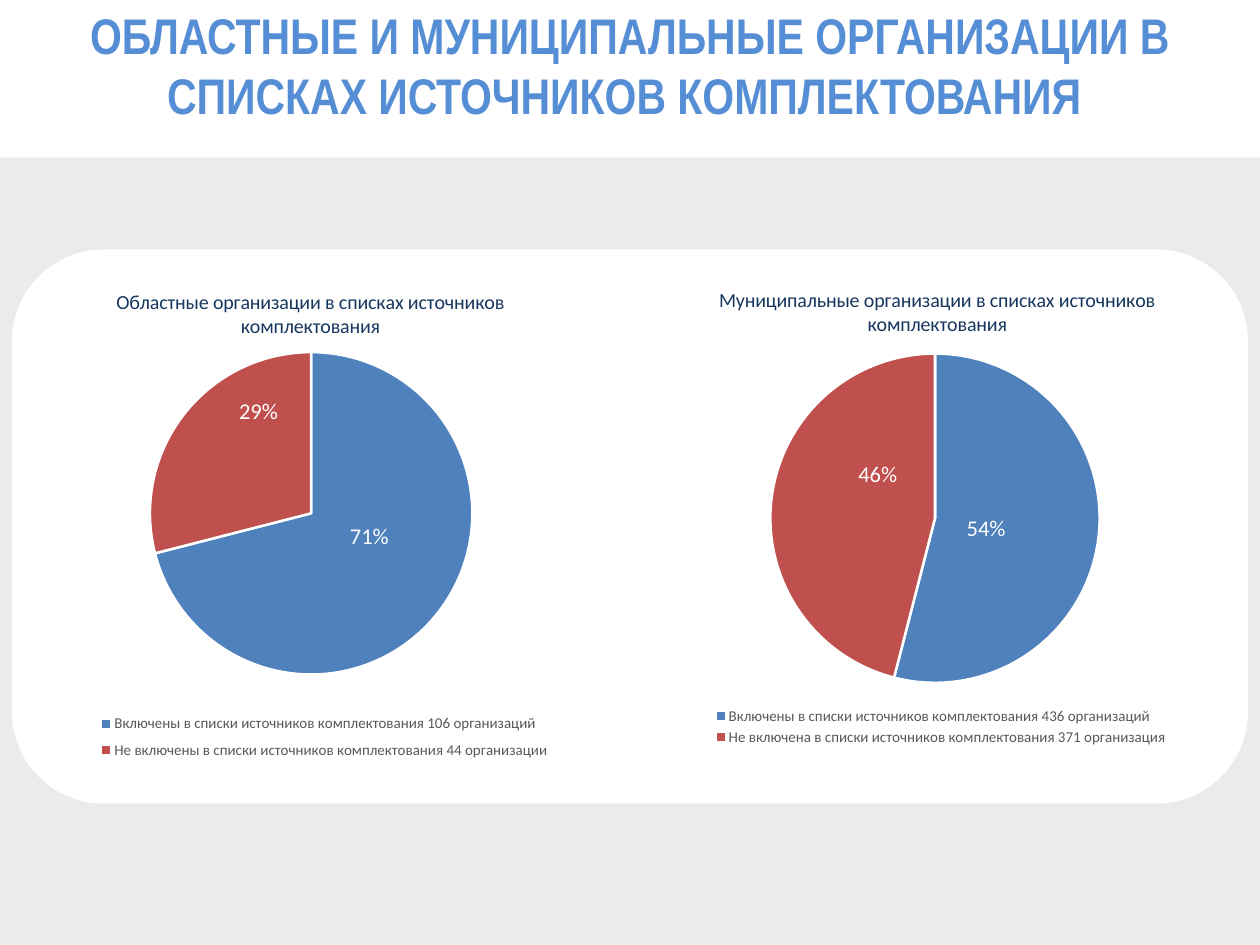
import dataclasses
import typing

import lxml.etree
import pptx
import pptx.chart.data
import pptx.dml.color
import pptx.enum.chart
import pptx.enum.shapes
import pptx.enum.text
import pptx.oxml.ns
import pptx.util

Pt = pptx.util.Pt
Color = pptx.dml.color.RGBColor.from_string
qn = pptx.oxml.ns.qn


@dataclasses.dataclass(frozen=True)
class Theme:
    white: str = "FFFFFF"
    black: str = "000000"
    backdrop: str = "EBEBEB"
    heading: str = "558ED5"
    chart_title: str = "17375E"
    legend: str = "595959"
    slices: tuple[str, str] = ("4F81BD", "C0504D")
    heading_font: str = "Arial Narrow"
    chart_font: str = "Calibri"
    heading_size: int = 40
    chart_title_size: int = 16
    label_size: int = 18
    legend_size: int = 12
    chart_size: int = 10


class Box(typing.NamedTuple):
    left: float
    top: float
    width: float
    height: float


@dataclasses.dataclass(frozen=True)
class Pie:
    """Box is in points; the other places are fractions of the chart."""
    box: Box
    title: str
    slices: dict[str, int]
    plot: Box
    legend: Box
    title_at: tuple[float, float]
    label_shifts: tuple[tuple[float, float], ...]


THEME = Theme()
SLIDE_WIDTH, SLIDE_HEIGHT = 1008, 756
HEADING = (
    "ОБЛАСТНЫЕ И МУНИЦИПАЛЬНЫЕ ОРГАНИЗАЦИИ В "
    "СПИСКАХ ИСТОЧНИКОВ КОМПЛЕКТОВАНИЯ "
)
PIES = (
    Pie(
        Box(24, 211, 441, 416),
        "Областные организации в списках источников комплектования",
        {
            "Включены в списки источников комплектования 106 организаций": 71,
            "Не включены в списки источников комплектования 44 организации": 29,
        },
        plot=Box(0.1, 0.17, 0.82, 0.62),
        legend=Box(0.12, 0.85, 0.83, 0.12),
        title_at=(0.15, 0.04),
        label_shifts=((-0.01, -0.05), (0.02, -0.1)),
    ),
    Pie(
        Box(504, 199.5, 488, 439),
        "Муниципальные организации в списках источников комплектования",
        {
            "Включены в списки источников комплектования 436 организаций": 54,
            "Не включена в списки источников комплектования 371 организация": 46,
        },
        plot=Box(0.11, 0.19, 0.78, 0.6),
        legend=Box(0.13, 0.83, 0.76, 0.08),
        title_at=(0.14, 0.06),
        label_shifts=((-0.05, 0), (0.04, -0.06)),
    ),
)


def set_font(font, size: int, color: str, name: str, bold: bool = False) -> None:
    for key, value in {"size": Pt(size), "name": name, "bold": bold}.items():
        setattr(font, key, value)
    font.color.rgb = Color(color)


def place(shape, box: Box) -> None:
    for key, value in box._asdict().items():
        setattr(shape, key, Pt(value))


def set_layout(parent, position: int, values: dict[str, typing.Any]) -> None:
    """Give a chart part a manual layout as its child at the position."""
    for old in parent.findall(qn("c:layout")):
        parent.remove(old)
    layout = lxml.etree.Element(qn("c:layout"))
    manual = lxml.etree.SubElement(layout, qn("c:manualLayout"))
    for key, value in values.items():
        lxml.etree.SubElement(manual, qn(f"c:{key}")).set("val", str(value))
    parent.insert(position, layout)


def edge_layout(box: Box) -> dict[str, typing.Any]:
    return {"xMode": "edge", "yMode": "edge",
            "x": box.left, "y": box.top, "w": box.width, "h": box.height}


def add_panel(slide, kind, box: Box, color: str) -> None:
    shape = slide.shapes.add_shape(kind, *(Pt(value) for value in box))
    shape.shadow.inherit = False
    shape.fill.solid()
    shape.fill.fore_color.rgb = Color(color)
    shape.line.fill.background()


def add_heading(slide) -> None:
    title = slide.shapes.title
    place(title, Box(0, 0, SLIDE_WIDTH, 117))
    frame = title.text_frame
    frame.text = HEADING
    for key, value in {
        "word_wrap": True,
        "auto_size": pptx.enum.text.MSO_AUTO_SIZE.NONE,
        "vertical_anchor": pptx.enum.text.MSO_ANCHOR.TOP,
    }.items():
        setattr(frame, key, value)
    paragraph = frame.paragraphs[0]
    paragraph.alignment = pptx.enum.text.PP_ALIGN.CENTER
    set_font(paragraph.runs[0].font, THEME.heading_size, THEME.heading,
             THEME.heading_font, bold=True)


def format_slices(series, pie: Pie) -> None:
    labels = series.data_labels
    labels.show_percentage = True
    labels.show_value = False
    for index, (color, shift) in enumerate(zip(THEME.slices, pie.label_shifts)):
        point = series.points[index]
        point.format.fill.solid()
        point.format.fill.fore_color.rgb = Color(color)
        point.format.line.color.rgb = Color(THEME.white)
        point.format.line.width = Pt(2)
        label = point.data_label
        set_font(label.font, THEME.label_size, THEME.white, THEME.chart_font)
        label.position = pptx.enum.chart.XL_LABEL_POSITION.CENTER
        element = labels._element.findall(qn("c:dLbl"))[index]
        element.find(qn("c:showVal")).set("val", "0")
        element.find(qn("c:showPercent")).set("val", "1")
        set_layout(element, 1, {"x": shift[0], "y": shift[1]})


def add_pie(slide, pie: Pie) -> None:
    data = pptx.chart.data.CategoryChartData()
    data.categories = list(pie.slices)
    data.add_series("Series 1", list(pie.slices.values()))
    chart = slide.shapes.add_chart(
        pptx.enum.chart.XL_CHART_TYPE.PIE,
        *(Pt(value) for value in pie.box), data,
    ).chart
    set_font(chart.font, THEME.chart_size, THEME.black, THEME.chart_font)

    chart.has_title = True
    chart.chart_title.text_frame.text = pie.title
    set_font(chart.chart_title.text_frame.paragraphs[0].runs[0].font,
             THEME.chart_title_size, THEME.chart_title, THEME.chart_font)
    left, top = pie.title_at
    set_layout(chart.chart_title._element, 1,
               {"xMode": "edge", "yMode": "edge", "x": left, "y": top})

    chart.has_legend = True
    chart.legend.position = pptx.enum.chart.XL_LEGEND_POSITION.TOP
    chart.legend.include_in_layout = False
    set_font(chart.legend.font, THEME.legend_size, THEME.legend, THEME.chart_font)
    set_layout(chart.legend._element, 1, edge_layout(pie.legend))

    plot = chart.plots[0]
    plot.vary_by_categories = True
    format_slices(plot.series[0], pie)
    set_layout(plot._element.getparent(), 0,
               {"layoutTarget": "inner", **edge_layout(pie.plot)})


def main() -> None:
    presentation = pptx.Presentation()
    presentation.slide_width = Pt(SLIDE_WIDTH)
    presentation.slide_height = Pt(SLIDE_HEIGHT)
    slide = presentation.slides.add_slide(presentation.slide_layouts[5])
    kinds = pptx.enum.shapes.MSO_SHAPE
    add_panel(slide, kinds.RECTANGLE,
              Box(0, 126, SLIDE_WIDTH, SLIDE_HEIGHT - 126), THEME.backdrop)
    add_heading(slide)
    add_panel(slide, kinds.ROUNDED_RECTANGLE,
              Box(9.5, 199.5, SLIDE_WIDTH - 19, 443.5), THEME.white)
    for pie in PIES:
        add_pie(slide, pie)
    presentation.save("out.pptx")


if __name__ == "__main__":
    main()
